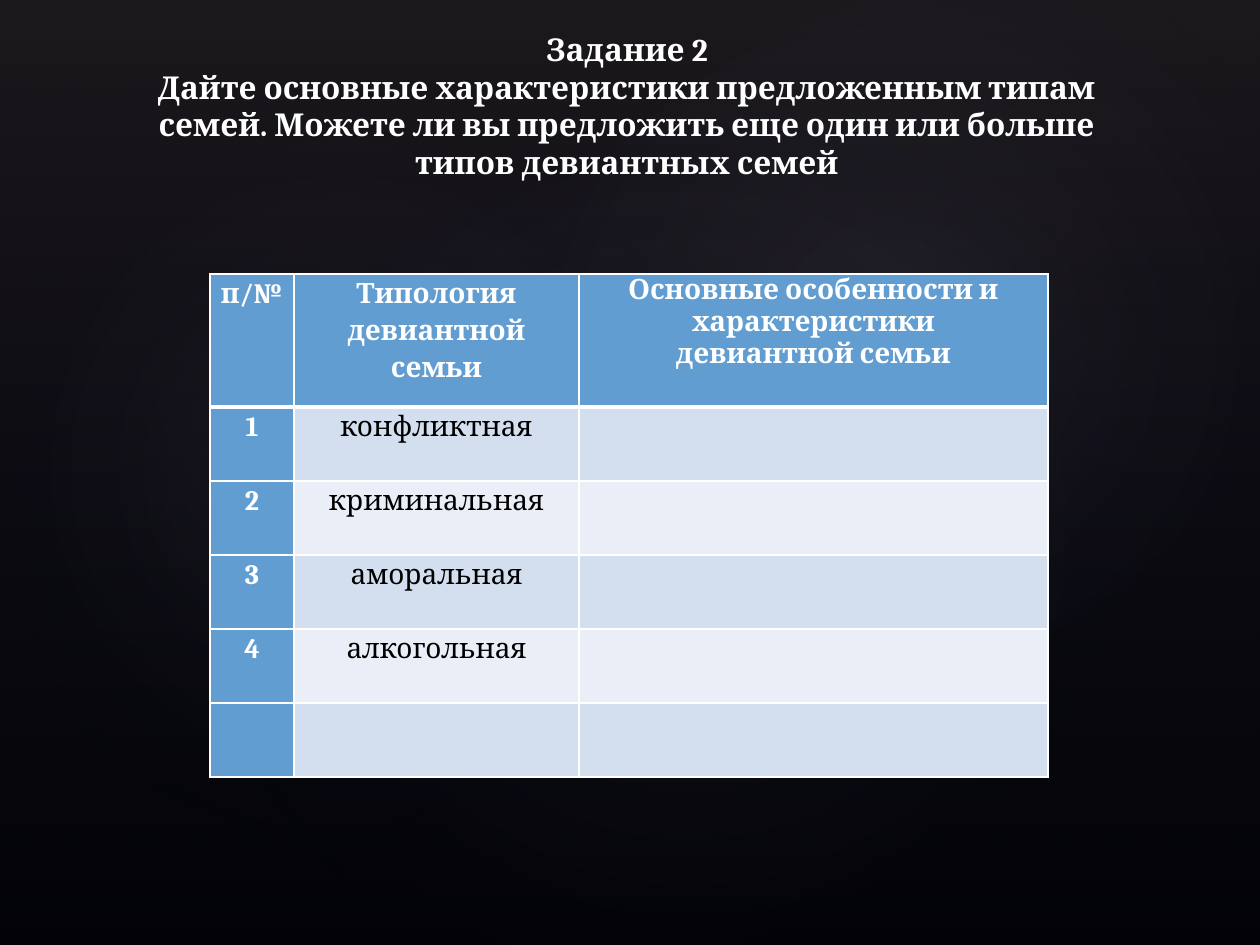
from lxml import etree
from pptx import Presentation
from pptx import util as u
from pptx.dml import color
from pptx.enum import shapes, text
from pptx.oxml import ns

FONT = "Cambria"
WHITE, BLUE, BLACK = "FFFFFF", "629DD1", "000000"
BANDS = ["D3DFEE", "EAEFF7"]
COLS = [84, 285, 469]
ROWS = [133] + [74] * 5
GLOWS = [
    ((189, 144, 998, 786), 328.7, 7),
    ((-38, 161, 764, 617), 294.3, 8),
    ((451, 16, 893, 655), 328.7, 8),
]
HEAD = ["п/№", "Типология девиантной семьи",
        "Основные особенности и характеристики\nдевиантной семьи"]
KINDS = ["конфликтная", "криминальная", "аморальная", "алкогольная"]
TITLE = ("Задание 2\vДайте основные характеристики предложенным типам семей. "
         "Можете ли вы предложить еще один или больше типов девиантных семей")


def px(n):
    return u.Emu(round(n * 914400 / 126))


def rgb(code):
    return color.RGBColor.from_string(code)


def put(item, **vals):
    for key, val in vals.items():
        setattr(item, key, val)


def node(base, tag, **vals):
    return etree.SubElement(base, ns.qn("a:" + tag),
                            {key: str(val) for key, val in vals.items()})


def style(frame, size, code, bold, lead):
    for para in frame.paragraphs:
        put(para, alignment=text.PP_ALIGN.CENTER, line_spacing=lead)
        for run in para.runs:
            put(run.font, name=FONT, size=u.Pt(size), bold=bold)
            run.font.color.rgb = rgb(code)


def shade(slide, kind, box, stops, turn=0, round_fill=False):
    shape = slide.shapes.add_shape(kind, *map(px, box))
    shape.rotation = turn
    shape.shadow.inherit = False
    shape.line.fill.background()
    shape.fill.background()
    props = shape._element.spPr
    old = props.find(ns.qn("a:noFill"))
    grad = etree.Element(ns.qn("a:gradFill"), rotWithShape="1")
    props.replace(old, grad)
    items = node(grad, "gsLst")
    for pos, code, alpha in stops:
        tint = node(node(items, "gs", pos=pos * 1000), "srgbClr", val=code)
        node(tint, "alpha", val=alpha * 1000)
    if round_fill:
        way = node(grad, "path", path="circle")
        node(way, "fillToRect", l=50000, t=50000, r=50000, b=50000)
    else:
        node(grad, "lin", ang=5400000, scaled=0)


def backdrop(slide, box):
    slide.background.fill.solid()
    slide.background.fill.fore_color.rgb = rgb(BLACK)
    shade(slide, shapes.MSO_SHAPE.RECTANGLE, box,
          [(0, "504652", 36), (100, "242852", 10)])
    for (x, y, w, h), turn, alpha in GLOWS:
        shade(slide, shapes.MSO_SHAPE.OVAL, (box[0] + x, box[1] + y, w, h),
              [(0, "C4BCC6", alpha), (58, "242852", 0)], turn, True)


def heading(slide, box):
    title = slide.shapes.title
    slide.shapes._spTree.append(title._element)
    for key, val in zip(("left", "top", "width", "height"), box):
        setattr(title, key, px(val))
    frame = title.text_frame
    frame.text = TITLE
    put(frame, word_wrap=True, auto_size=text.MSO_AUTO_SIZE.NONE,
        vertical_anchor=text.MSO_ANCHOR.BOTTOM, margin_bottom=px(44))
    style(frame, 18, WHITE, True, 1)


def border(cell, **sides):
    props = cell._tc.get_or_add_tcPr()
    for spot, (side, width) in enumerate(sides.items()):
        line = etree.Element(ns.qn("a:ln" + side), w=str(u.Pt(width)))
        node(node(line, "solidFill"), "srgbClr", val=WHITE)
        props.insert(spot, line)


def grid(slide, x, y):
    data = [HEAD] + [[str(n), kind, ""] for n, kind in enumerate(KINDS, 1)]
    data.append([""] * 3)
    table = slide.shapes.add_table(len(ROWS), len(COLS), px(x), px(y),
                                   px(sum(COLS)), px(sum(ROWS))).table
    for col, width in zip(table.columns, COLS):
        col.width = px(width)
    for r, (row, tall) in enumerate(zip(data, ROWS)):
        table.rows[r].height = px(tall)
        for c, word in enumerate(row):
            cell = table.cell(r, c)
            key = r == 0 or c == 0
            put(cell, text=word, margin_left=px(9), margin_right=px(9),
                margin_top=0, margin_bottom=0)
            cell.fill.solid()
            cell.fill.fore_color.rgb = rgb(BLUE if key else BANDS[(r - 1) % 2])
            style(cell.text_frame, 16, WHITE if key else BLACK, key,
                  1 if (r, c) == (0, 2) else 1.15)
            border(cell, L=1, R=1, T=3 if r == 1 else 1, B=3 if r == 0 else 1)


def main():
    deck = Presentation()
    put(deck, slide_width=px(1260), slide_height=px(945))
    slide = deck.slides.add_slide(deck.slide_layouts[5])
    backdrop(slide, (0, 0, 1260, 945))
    grid(slide, 210, 274)
    heading(slide, (107, 36, 1040, 189))
    deck.save("out.pptx")


if __name__ == "__main__":
    main()
